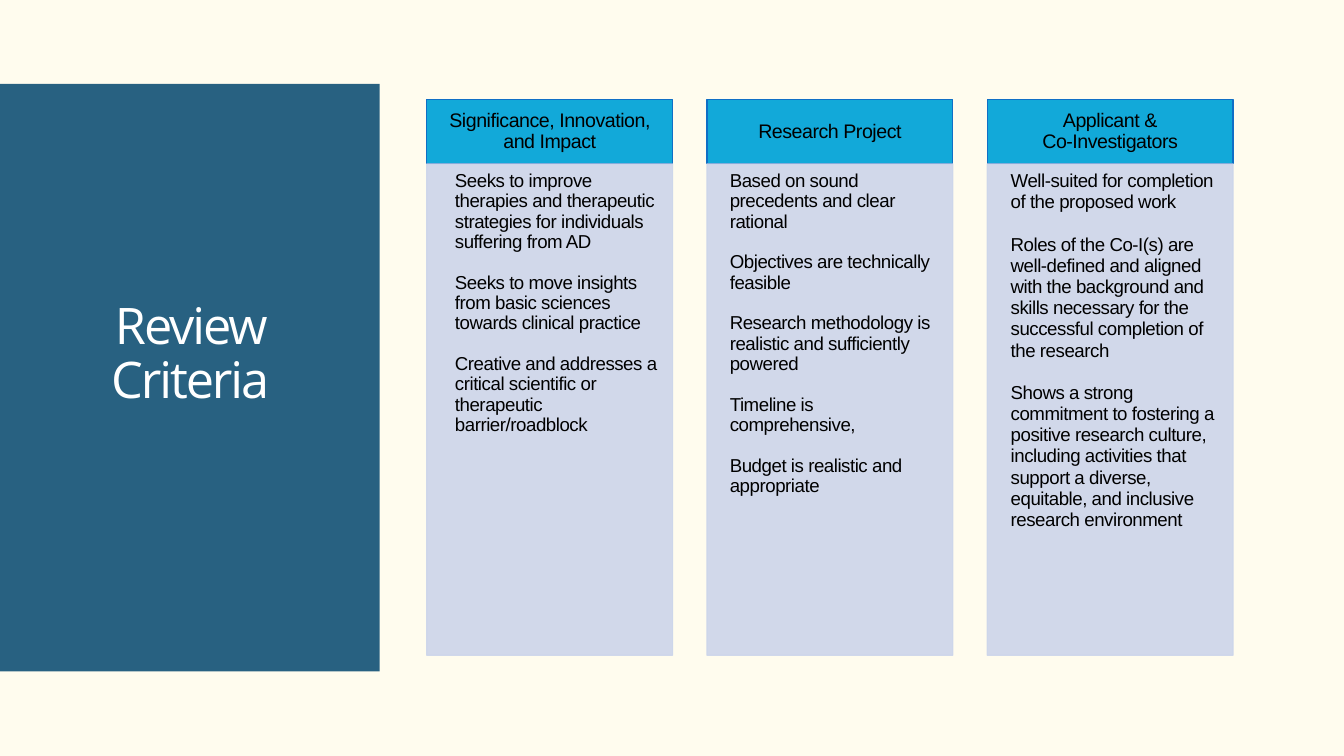
from dataclasses import dataclass

from lxml.etree import SubElement
from pptx import Presentation
from pptx.dml.color import RGBColor
from pptx.enum.shapes import MSO_SHAPE
from pptx.enum.text import MSO_ANCHOR, MSO_AUTO_SIZE, PP_ALIGN
from pptx.oxml.ns import qn
from pptx.util import Inches, Pt


@dataclass(frozen=True)
class Theme:
    paper: str = "FFFCEE"
    band: str = "286181"
    head: str = "12A9D9"
    edge: str = "0F6FC6"
    panel: str = "CCD5EA"
    ink: str = "000000"
    white: str = "FFFFFF"
    title_font: str = "Open Sans"
    font: str = "Arial"
    title_size: float = 54
    head_size: float = 21
    list_size: float = 20


LEFT, PITCH, WIDTH = 6.35, 4.17, 3.66
HEAD_TOP, LIST_TOP, BOTTOM = 1.48, 2.44, 9.75

# Heading lines, list items, list box (offset, top, width, indent), line pitch
COLUMNS = [
    (["Significance, Innovation, and Impact"],
     ["Seeks to improve therapies and therapeutic strategies for individuals "
      "suffering from AD",
      "Seeks to move insights from basic sciences towards clinical practice",
      "Creative and addresses a critical scientific or therapeutic "
      "barrier/roadblock"],
     (0.15, 2.54, 3.35, 0.27), 21.8),
    (["Research Project"],
     ["Based on sound precedents and clear rational",
      "Objectives are technically feasible",
      "Research methodology is realistic and sufficiently powered",
      "Timeline is comprehensive,",
      "Budget is realistic and appropriate"],
     (0.07, 2.54, 3.35, 0.27), 21.8),
    (["Applicant &", "Co-Investigators"],
     ["Well-suited for completion of the proposed work",
      "Roles of the Co-I(s) are well-defined and aligned with the background "
      "and skills necessary for the successful completion of the research",
      "Shows a strong commitment to fostering a positive research culture, "
      "including activities that support a diverse, equitable, and inclusive "
      "research environment"],
     (0.07, 2.53, 3.48, 0.28), 22.7),
]


def write(frame, lines, *, font, size, color, pitch, track=-0.5, gap=0,
          indent=0, inset=0, align=PP_ALIGN.LEFT, anchor=MSO_ANCHOR.TOP):
    """Fill a text frame, one paragraph a line; pitch, gap and track in points."""
    frame.word_wrap = True
    frame.auto_size = MSO_AUTO_SIZE.NONE
    frame.vertical_anchor = anchor
    frame.margin_left = frame.margin_right = Inches(inset)
    frame.margin_top = frame.margin_bottom = 0
    for i, line in enumerate(lines):
        para = frame.add_paragraph() if i else frame.paragraphs[0]
        para.alignment = align
        para.line_spacing = Pt(pitch)
        para.space_before = Pt(gap if i else 0)
        para.space_after = Pt(0)
        props = para._p.get_or_add_pPr()
        props.set("marL", str(Inches(indent)))
        props.set("indent", "0")
        SubElement(props, qn("a:buNone"))
        run = para.add_run()
        run.text = line
        run.font.name = font
        run.font.size = Pt(size)
        run.font.bold = False
        run.font.color.rgb = RGBColor.from_string(color)
        run._r.get_or_add_rPr().set("spc", str(round(track * 100)))


class Painter:
    """Holds the theme and the slide being drawn."""

    def __init__(self, slide, theme):
        self.slide, self.theme = slide, theme
        slide.background.fill.solid()
        slide.background.fill.fore_color.rgb = RGBColor.from_string(theme.paper)

    def tint(self, fill, color, alpha):
        fill.solid()
        fill.fore_color.rgb = RGBColor.from_string(color)
        if alpha < 100:
            node = fill._xPr.find(qn("a:solidFill"))[0]
            SubElement(node, qn("a:alpha"), val=str(alpha * 1000))

    def box(self, left, top, width, height, color, edge=None, alpha=100):
        shape = self.slide.shapes.add_shape(
            MSO_SHAPE.RECTANGLE, Inches(left), Inches(top),
            Inches(width), Inches(height))
        shape.shadow.inherit = False
        self.tint(shape.fill, color, alpha)
        if edge:
            shape.line.width = Pt(1.25)
            self.tint(shape.line.fill, edge, alpha)
        else:
            shape.line.fill.background()
        return shape

    def place(self, holder, left, top, width, height):
        """Move a placeholder and bring it to the front."""
        holder.left, holder.top = Inches(left), Inches(top)
        holder.width, holder.height = Inches(width), Inches(height)
        self.slide.shapes._spTree.append(holder._element)
        return holder.text_frame

    def title(self, text):
        look = self.theme
        self.box(0, 1.25, 5.65, 8.74, look.band)
        frame = self.place(self.slide.shapes.title, 0.51, 4.46, 4.64, 1.63)
        write(frame, [text], font=look.title_font, size=look.title_size,
              color=look.white, pitch=58.3, track=-2.2, align=PP_ALIGN.CENTER)

    def column(self, left, head, items, holder, area, pitch):
        look = self.theme
        shape = self.box(left, HEAD_TOP, WIDTH, LIST_TOP - HEAD_TOP,
                         look.head, look.edge)
        write(shape.text_frame, head, font=look.font, size=look.head_size,
              color=look.ink, pitch=22.7, inset=0.1,
              align=PP_ALIGN.CENTER, anchor=MSO_ANCHOR.MIDDLE)
        self.box(left, LIST_TOP, WIDTH, BOTTOM - LIST_TOP,
                 look.panel, look.panel, alpha=90)
        shift, top, width, indent = area
        frame = self.place(holder, left + shift, top, width, BOTTOM - top)
        write(frame, items, font=look.font, size=look.list_size,
              color=look.ink, pitch=pitch, gap=pitch, indent=indent)


def main():
    deck = Presentation()
    deck.slide_width, deck.slide_height = Inches(20), Inches(11.25)
    slide = deck.slides.add_slide(deck.slide_layouts.get_by_name("Comparison"))
    _, *bodies, spare = slide.placeholders
    spare._element.getparent().remove(spare._element)

    paint = Painter(slide, Theme())
    paint.title("Review Criteria")
    for i, (holder, column) in enumerate(zip(bodies, COLUMNS)):
        head, items, area, pitch = column
        paint.column(LEFT + i * PITCH, head, items, holder, area, pitch)
    deck.save("out.pptx")


if __name__ == "__main__":
    main()
